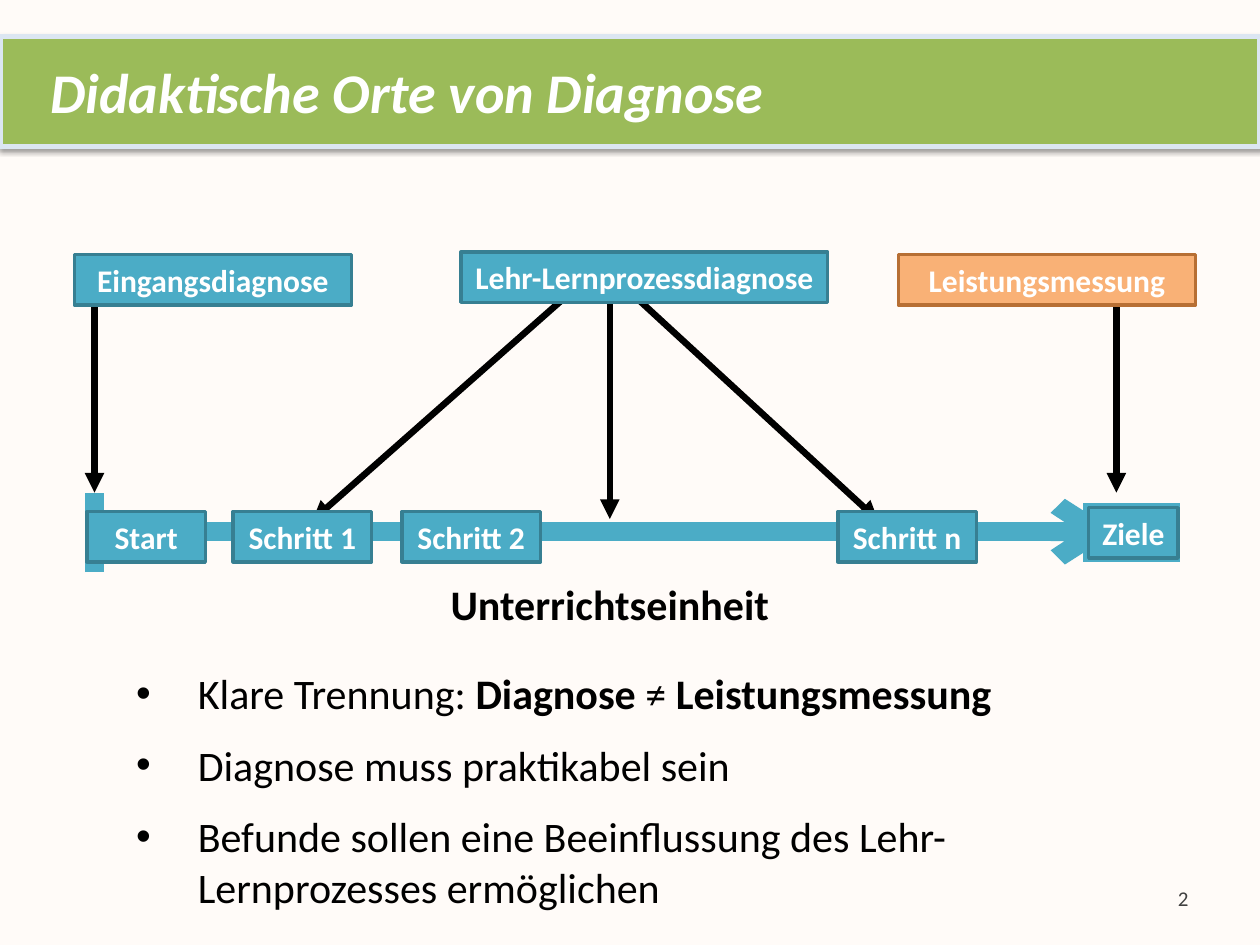
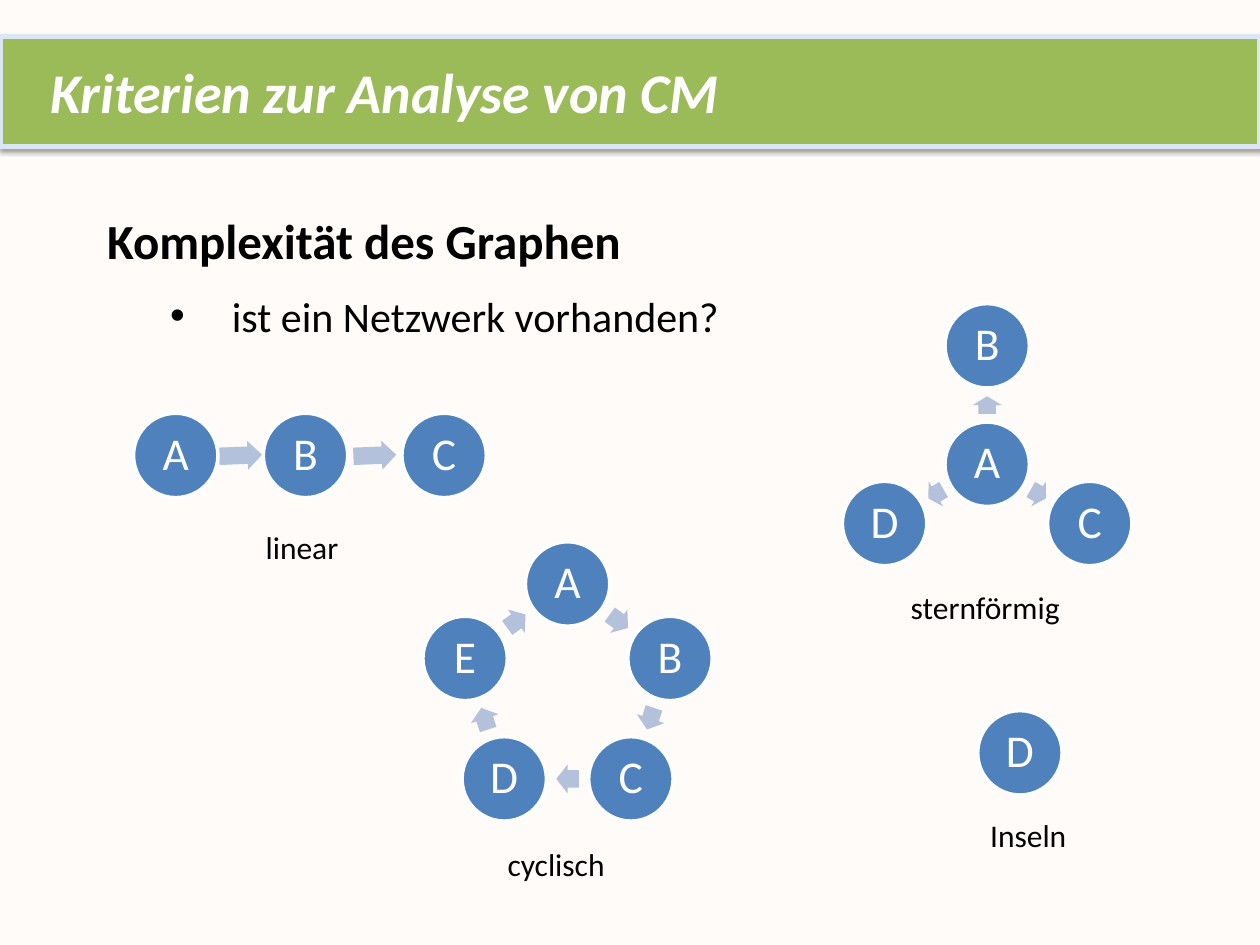
from math import atan2, cos, degrees, radians, sin

from lxml.etree import SubElement
from pptx import Presentation
from pptx.dml.color import RGBColor
from pptx.enum.shapes import MSO_CONNECTOR as Connector, MSO_SHAPE as Shape
from pptx.enum.text import MSO_ANCHOR as Anchor, MSO_AUTO_SIZE as AutoSize, PP_ALIGN as Align
from pptx.oxml.ns import qn
from pptx.util import Inches, Pt

# Palette
CREAM = RGBColor(0xFF, 0xFB, 0xF8)
GREEN = RGBColor(0x9B, 0xBB, 0x59)
PALE_BLUE = RGBColor(0xDC, 0xE6, 0xF2)
TEAL = RGBColor(0x4B, 0xAC, 0xC6)
DARK_TEAL = RGBColor(0x37, 0x7F, 0x92)
ORANGE = RGBColor(0xF7, 0x96, 0x46)
DARK_ORANGE = RGBColor(0xB7, 0x6F, 0x34)
BLUE = RGBColor(0x4F, 0x81, 0xBD)
LIGHT_BLUE = RGBColor(0xB3, 0xC1, 0xDB)
GREY = RGBColor(0x40, 0x40, 0x40)
WHITE = RGBColor(0xFF, 0xFF, 0xFF)
BLACK = RGBColor(0, 0, 0)

# The slide is a grid of 100 columns and 75 rows of square cells
CELL = Inches(0.1)
FONT = "Calibri"
TITLE_FONT = {"name": FONT, "size": Pt(32), "bold": True, "italic": True}
BOX_FONT = {"name": FONT, "size": Pt(18), "bold": True}
NODE_FONT = {"name": FONT, "size": Pt(26), "bold": False}
CAPTION_FONT = {"name": FONT, "size": Pt(18), "bold": False}


def draw(page, kind, bounds, text="", font=BOX_FONT, color=WHITE, fill=None, outline=None):
    """Add a preset shape, or a text box when kind is None; bounds are in cells."""
    bounds = [round(value * CELL) for value in bounds]
    if kind is None:
        box = page.shapes.add_textbox(*bounds)
    else:
        box = page.shapes.add_shape(kind, *bounds)
        box.shadow.inherit = False
        box.fill.solid()
        box.fill.fore_color.rgb = fill
        if outline is None:
            box.line.fill.background()
        else:
            box.line.color.rgb = outline
            box.line.width = Pt(2)
    if text:
        box.text_frame.word_wrap = False
        para = box.text_frame.paragraphs[0]
        para.alignment = Align.LEFT if kind is None else Align.CENTER
        span = para.add_run()
        span.text = text
        span.font.color.rgb = color
        for name, value in font.items():
            setattr(span.font, name, value)
    return box


def connect(page, start, end, color=BLACK, width=3.75, head="triangle"):
    """Add a straight line between two points given in cells."""
    points = [round(value * CELL) for value in (*start, *end)]
    line = page.shapes.add_connector(Connector.STRAIGHT, *points)
    line.line.color.rgb = color
    line.line.width = Pt(width)
    if head:
        SubElement(line.line._get_or_add_ln(), qn("a:tailEnd"), type=head)
    SubElement(line._element.spPr, qn("a:effectLst"))


deck = Presentation()
deck.slide_width, deck.slide_height = 100 * CELL, 75 * CELL
background = deck.slide_master.background.fill
background.solid()
background.fore_color.rgb = CREAM

# Titles and lists: (level, left margin in cells, bullet, size, [(text, bold)])
contents = [
    ("Didaktische Orte von Diagnose", (9.8, 52.5, 82.7, 20.5), [
        (0, 4.9, "•", 24, [("Klare Trennung: ", False), ("Diagnose", True),
                           (" ≠ ", False), ("Leistungsmessung", True)]),
        (0, 4.9, "•", 24, [("Diagnose muss praktikabel sein", False)]),
        (0, 4.9, "•", 24, [("Befunde sollen eine Beeinflussung des "
                            "Lehr-Lernprozesses ermöglichen", False)])]),
    ("Kriterien zur Analyse von CM", (7.5, 16.2, 83.5, 24.9), [
        (0, 4.9, None, 28, [("Komplexität des Graphen", True)]),
        (1, 9.9, "•", 24, [("ist ein Netzwerk vorhanden?", False)])]),
]

pages = []
for title, body_bounds, items in contents:
    page = deck.slides.add_slide(deck.slide_layouts[1])
    pages.append(page)
    band, body = page.shapes.title, page.placeholders[1]
    for holder, bounds in ((band, (0, 2.9, 100, 8.7)), (body, body_bounds)):
        sides = zip(("left", "top", "width", "height"), bounds)
        for side, value in sides:
            setattr(holder, side, round(value * CELL))
        holder.text_frame.auto_size = AutoSize.NONE
        holder.text_frame.word_wrap = True

    # Title band with a soft shadow
    band.fill.solid()
    band.fill.fore_color.rgb = GREEN
    band.line.color.rgb = PALE_BLUE
    band.line.width = Pt(3)
    effects = SubElement(band._element.spPr, qn("a:effectLst"))
    shadow = SubElement(effects, qn("a:outerShdw"), blurRad=str(Pt(3.1)),
                        dist=str(Pt(1.6)), dir="5400000", rotWithShape="0")
    shade = SubElement(shadow, qn("a:srgbClr"), val=str(BLACK))
    SubElement(shade, qn("a:alpha"), val="38000")
    band.text_frame.margin_left = 4 * CELL
    band.text_frame.vertical_anchor = Anchor.MIDDLE
    para = band.text_frame.paragraphs[0]
    para.alignment = Align.LEFT
    span = para.add_run()
    span.text = title
    span.font.color.rgb = WHITE
    for name, value in TITLE_FONT.items():
        setattr(span.font, name, value)

    # List
    body.text_frame.vertical_anchor = Anchor.TOP
    for index, (level, margin, bullet, size, spans) in enumerate(items):
        para = body.text_frame.paragraphs[0] if index == 0 else body.text_frame.add_paragraph()
        para.level = level
        para.space_before = para.space_after = Pt(6)
        properties = para._p.get_or_add_pPr()
        properties.set("marL", str(round(margin * CELL)))
        properties.set("indent", str(round(-4.9 * CELL)))
        if bullet:
            SubElement(properties, qn("a:buFont"), typeface="Arial")
            SubElement(properties, qn("a:buChar"), char=bullet)
        else:
            SubElement(properties, qn("a:buNone"))
        for text, bold in spans:
            span = para.add_run()
            span.text = text
            span.font.color.rgb = BLACK
            for name, value in {"name": FONT, "size": Pt(size), "bold": bold}.items():
                setattr(span.font, name, value)

timeline_page, graph_page = pages

# Timeline of the teaching unit
connect(timeline_page, (7.5, 42.2), (88.6, 42.2), TEAL, 10.75, "arrow")
connect(timeline_page, (89.8, 44.6), (89.8, 39.9), TEAL, 55, None)
connect(timeline_page, (7.5, 45.4), (7.5, 39.1), TEAL, 10.75, None)

# Arrows from the diagnoses down to the timeline
for start, end in [((88.6, 24.1), (88.6, 39.1)), ((7.5, 24.1), (7.5, 39.1)),
                   ((50.8, 23.9), (69.7, 41.3)), ((48.4, 23.9), (48.4, 41.2)),
                   ((44.5, 23.9), (24.8, 41.3))]:
    connect(timeline_page, start, end)

# Diagnoses and steps
for text, left, top, width in [
        ("Eingangsdiagnose", 5.9, 20.2, 22), ("Lehr-Lernprozessdiagnose", 36.6, 20, 29.1),
        ("Start", 6.9, 40.6, 9.4), ("Schritt 1", 18.5, 40.6, 11),
        ("Schritt 2", 31.9, 40.6, 11), ("Schritt n", 66.5, 40.6, 11),
        ("Ziele", 86.4, 40.3, 7.1)]:
    draw(timeline_page, Shape.RECTANGLE, (left, top, width, 4), text,
         fill=TEAL, outline=DARK_TEAL)
measurement = draw(timeline_page, Shape.RECTANGLE, (71.3, 20.2, 23.6, 4), "Leistungsmessung",
                   fill=ORANGE, outline=DARK_ORANGE)
tint = measurement._element.spPr.find(qn("a:solidFill"))[0]
SubElement(tint, qn("a:alpha"), val="73000")

# Timeline caption and page number
unit = draw(timeline_page, None, (29.9, 45.4, 37, 5), "Unterrichtseinheit",
            {**BOX_FONT, "size": Pt(24)}, BLACK)
unit.text_frame.word_wrap = True
unit.text_frame.paragraphs[0].alignment = Align.CENTER
draw(timeline_page, None, (92.5, 69.8, 2.9, 3), "2", {**CAPTION_FONT, "size": Pt(12)}, GREY)

# Graph types: caption, its bounds, nodes, edges, arrow length, arrow tilt
NODE, ARROW_HEIGHT = 6.7, 2.3
star = [("A", 78.35, 36.85)]
for letter, angle in zip("BCD", (-90, 30, 150)):
    star.append((letter, 78.35 + 9.4 * cos(radians(angle)), 36.85 + 9.4 * sin(radians(angle))))
ring = []
for index, letter in enumerate("ABCDE"):
    turn = radians(72 * index - 90)
    ring.append((letter, 45.05 + 8.55 * cos(turn), 54.9 + 8.55 * sin(turn)))
graphs = [
    ("linear", (20.1, 41.4, 7.9, 4),
     [("A", 13.95, 36.15), ("B", 24.25, 36.15), ("C", 35.25, 36.15)],
     [(0, 1), (1, 2)], 3.4, -2.3),
    ("sternförmig", (71.3, 46.2, 14, 4), star, [(0, 1), (0, 2), (0, 3)], 1.4, 0),
    ("cyclisch", (39.3, 66.6, 9.9, 4), ring, [(i, (i + 1) % 5) for i in range(5)], 1.8, 0),
    ("Inseln", (77.6, 64.3, 8.1, 4), [("D", 80.95, 59.75)], [], 0, 0),
]

for caption, caption_bounds, nodes, edges, length, tilt in graphs:
    for first, second in edges:
        _, x1, y1 = nodes[first]
        _, x2, y2 = nodes[second]
        arrow = draw(graph_page, Shape.RIGHT_ARROW,
                     ((x1 + x2 - length) / 2, (y1 + y2 - ARROW_HEIGHT) / 2, length, ARROW_HEIGHT),
                     fill=LIGHT_BLUE)
        arrow.adjustments[0], arrow.adjustments[1] = 0.6, 0.5
        arrow.rotation = (degrees(atan2(y2 - y1, x2 - x1)) + tilt) % 360
    for letter, x, y in nodes:
        node = draw(graph_page, Shape.OVAL, (x - NODE / 2, y - NODE / 2, NODE, NODE), letter,
                    NODE_FONT, fill=BLUE, outline=WHITE)
        node.text_frame.vertical_anchor = Anchor.MIDDLE
        node.text_frame.paragraphs[0].line_spacing = 0.9
        for side in ("left", "top", "right", "bottom"):
            setattr(node.text_frame, f"margin_{side}", Inches(0.04))
    draw(graph_page, None, caption_bounds, caption, CAPTION_FONT, BLACK)

deck.save("out.pptx")
